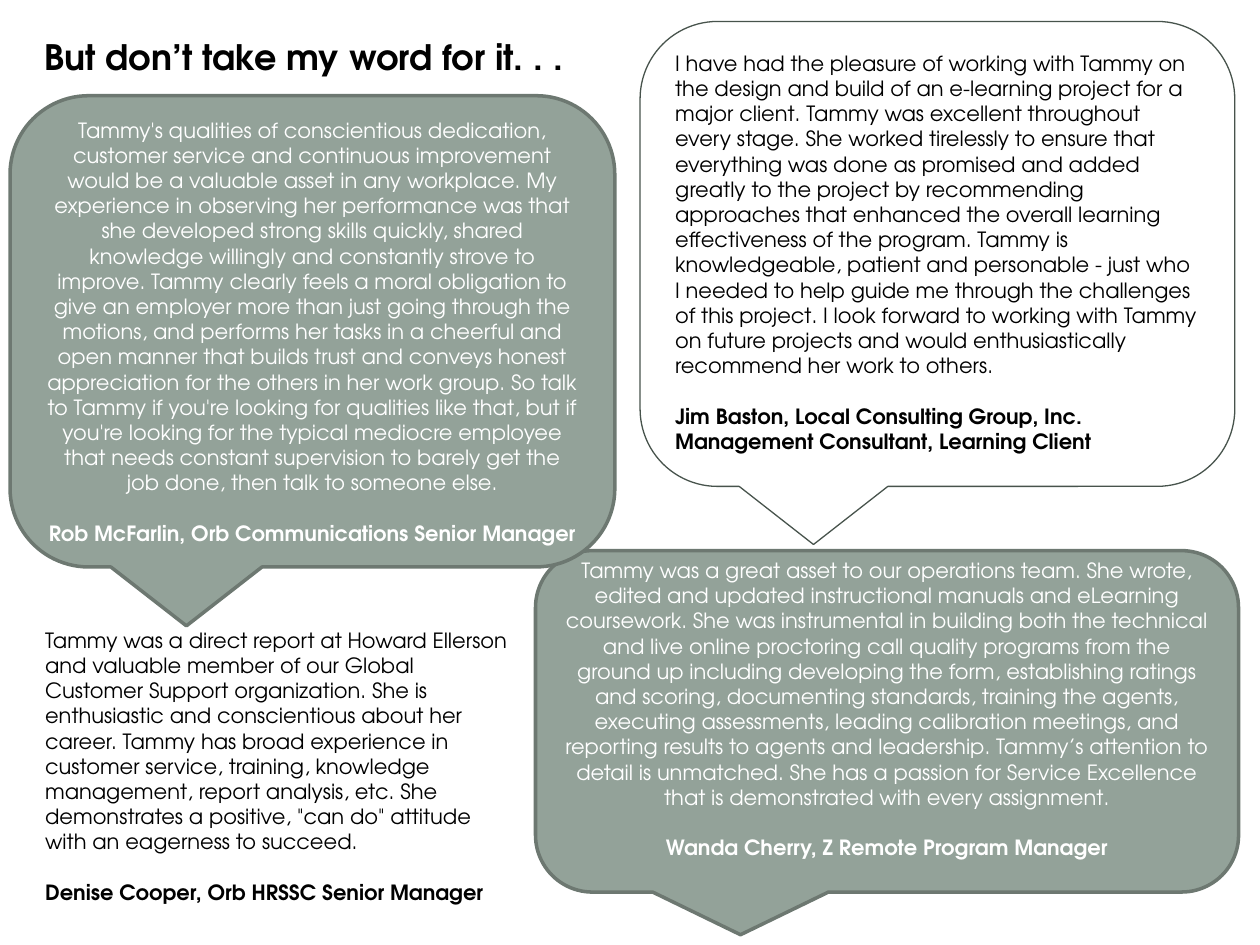
from dataclasses import dataclass
from typing import Optional

from pptx import Presentation
from pptx import util as u
from pptx.dml.color import RGBColor
from pptx.enum import shapes, text

COLUMNS, ROWS = 100, 75


@dataclass(frozen=True)
class Theme:
    font: str = "TeX Gyre Adventor"
    ink: str = "000000"
    paper: str = "FFFFFF"
    sage: str = "93A299"
    sage_edge: str = "6D7871"
    dark_edge: str = "47534C"
    title_size: float = 20
    quote_size: float = 12
    quote_gap: float = 14.4


THEME = Theme()


@dataclass(frozen=True)
class Area:
    """A place on the slide, in grid columns and rows."""
    column: float
    row: float
    columns: float
    rows: float


@dataclass(frozen=True)
class Bubble:
    color: str
    edge: str
    edge_width: float
    fill: Optional[str] = None
    align: text.PP_ALIGN = text.PP_ALIGN.LEFT
    anchor: text.MSO_ANCHOR = text.MSO_ANCHOR.TOP


OUTLINED = Bubble(THEME.ink, THEME.dark_edge, 0.75)
FILLED = Bubble(THEME.paper, THEME.sage_edge, 2, THEME.sage,
                text.PP_ALIGN.CENTER, text.MSO_ANCHOR.MIDDLE)


@dataclass(frozen=True)
class Testimonial:
    area: Area
    quote: str
    author: str
    bubble: Optional[Bubble] = None
    bottom_inset: float = 0.05


TITLE_AREA = Area(2.5, 2.3, 50, 4.4)
TESTIMONIALS = [
    Testimonial(
        Area(50.8, 1.7, 47.2, 36.9),
        "I have had the pleasure of working with Tammy on the design and build of an "
        "e-learning project for a major client. Tammy was excellent throughout every "
        "stage. She worked tirelessly to ensure that everything was done as promised "
        "and added greatly to the project by recommending approaches that enhanced the "
        "overall learning effectiveness of the program. Tammy is knowledgeable, patient "
        "and personable - just who I needed to help guide me through the challenges of "
        "this project. I look forward to working with Tammy on future projects and "
        "would enthusiastically recommend her work to others.",
        "Jim Baston, Local Consulting Group, Inc. Management Consultant, Learning Client",
        OUTLINED),
    Testimonial(
        Area(42.5, 43.7, 55.8, 27.1),
        "Tammy was a great asset to our operations team. She wrote, edited and updated "
        "instructional manuals and eLearning coursework. She was instrumental in "
        "building both the technical and live online proctoring call quality programs "
        "from the ground up including developing the form, establishing ratings and "
        "scoring, documenting standards, training the agents, executing assessments, "
        "leading calibration meetings, and reporting results to agents and leadership. "
        "Tammy’s attention to detail is unmatched. She has a passion for Service "
        "Excellence that is demonstrated with every assignment.",
        "Wanda Cherry, Z Remote Program Manager",
        FILLED, bottom_inset=0.25),
    Testimonial(
        Area(0.8, 7.6, 48, 37.4),
        "Tammy's qualities of conscientious dedication, customer service and continuous "
        "improvement would be a valuable asset in any workplace. My experience in "
        "observing her performance was that she developed strong skills quickly, shared "
        "knowledge willingly and constantly strove to improve. Tammy clearly feels a "
        "moral obligation to give an employer more than just going through the motions, "
        "and performs her tasks in a cheerful and open manner that builds trust and "
        "conveys honest appreciation for the others in her work group. So talk to Tammy "
        "if you're looking for qualities like that, but if you're looking for the "
        "typical mediocre employee that needs constant supervision to barely get the "
        "job done, then talk to someone else.",
        "Rob McFarlin, Orb Communications Senior Manager",
        FILLED),
    Testimonial(
        Area(2.6, 49.3, 38.7, 23.2),
        "Tammy was a direct report at Howard Ellerson and valuable member of our Global "
        "Customer Support organization. She is enthusiastic and conscientious about her "
        "career. Tammy has broad experience in customer service, training, knowledge "
        "management, report analysis, etc. She demonstrates a positive, \"can do\" "
        "attitude with an eagerness to succeed.",
        "Denise Cooper, Orb HRSSC Senior Manager"),
]


def write(paragraph, content: str, *, size: float = THEME.quote_size,
          color: str = THEME.ink, bold: bool = False,
          align: text.PP_ALIGN = text.PP_ALIGN.LEFT, before: float = 0) -> None:
    paragraph.alignment = align
    paragraph.space_before = u.Pt(before)
    run = paragraph.add_run()
    run.text = content
    run.font.name = THEME.font
    run.font.size = u.Pt(size)
    run.font.bold = bold
    run.font.color.rgb = RGBColor.from_string(color)


def on_slide(deck, area: Area) -> tuple[int, int, int, int]:
    """Turn grid units into left, top, width and height."""
    column, row = deck.slide_width / COLUMNS, deck.slide_height / ROWS
    return (round(area.column * column), round(area.row * row),
            round(area.columns * column), round(area.rows * row))


def add_title(deck, slide, content: str) -> None:
    title = slide.shapes.title
    title.left, title.top, title.width, title.height = on_slide(deck, TITLE_AREA)
    frame = title.text_frame
    frame.auto_size = text.MSO_AUTO_SIZE.NONE
    frame.vertical_anchor = text.MSO_ANCHOR.TOP
    write(frame.paragraphs[0], content, size=THEME.title_size, bold=True)


def add_bubble(deck, slide, area: Area, bubble: Bubble):
    callout = slide.shapes.add_shape(
        shapes.MSO_SHAPE.ROUNDED_RECTANGULAR_CALLOUT, *on_slide(deck, area))
    callout.shadow.inherit = False
    if bubble.fill:
        callout.fill.solid()
        callout.fill.fore_color.rgb = RGBColor.from_string(bubble.fill)
    else:
        callout.fill.background()
    callout.line.color.rgb = RGBColor.from_string(bubble.edge)
    callout.line.width = u.Pt(bubble.edge_width)
    callout.text_frame.vertical_anchor = bubble.anchor
    return callout


def add_testimonial(deck, slide, item: Testimonial) -> None:
    if item.bubble:
        holder = add_bubble(deck, slide, item.area, item.bubble)
        color, align = item.bubble.color, item.bubble.align
    else:
        holder = slide.shapes.add_textbox(*on_slide(deck, item.area))
        color, align = THEME.ink, text.PP_ALIGN.LEFT
    frame = holder.text_frame
    frame.word_wrap = True
    frame.margin_bottom = u.Inches(item.bottom_inset)
    write(frame.paragraphs[0], item.quote, color=color, align=align)
    write(frame.add_paragraph(), item.author, color=color, align=align,
          bold=True, before=THEME.quote_gap)


def main() -> None:
    deck = Presentation()
    deck.slide_width, deck.slide_height = u.Inches(10), u.Inches(7.5)
    slide = deck.slides.add_slide(deck.slide_layouts.get_by_name("Title Only"))
    add_title(deck, slide, "But don’t take my word for it. . .")
    for item in TESTIMONIALS:
        add_testimonial(deck, slide, item)
    deck.save("out.pptx")


if __name__ == "__main__":
    main()
